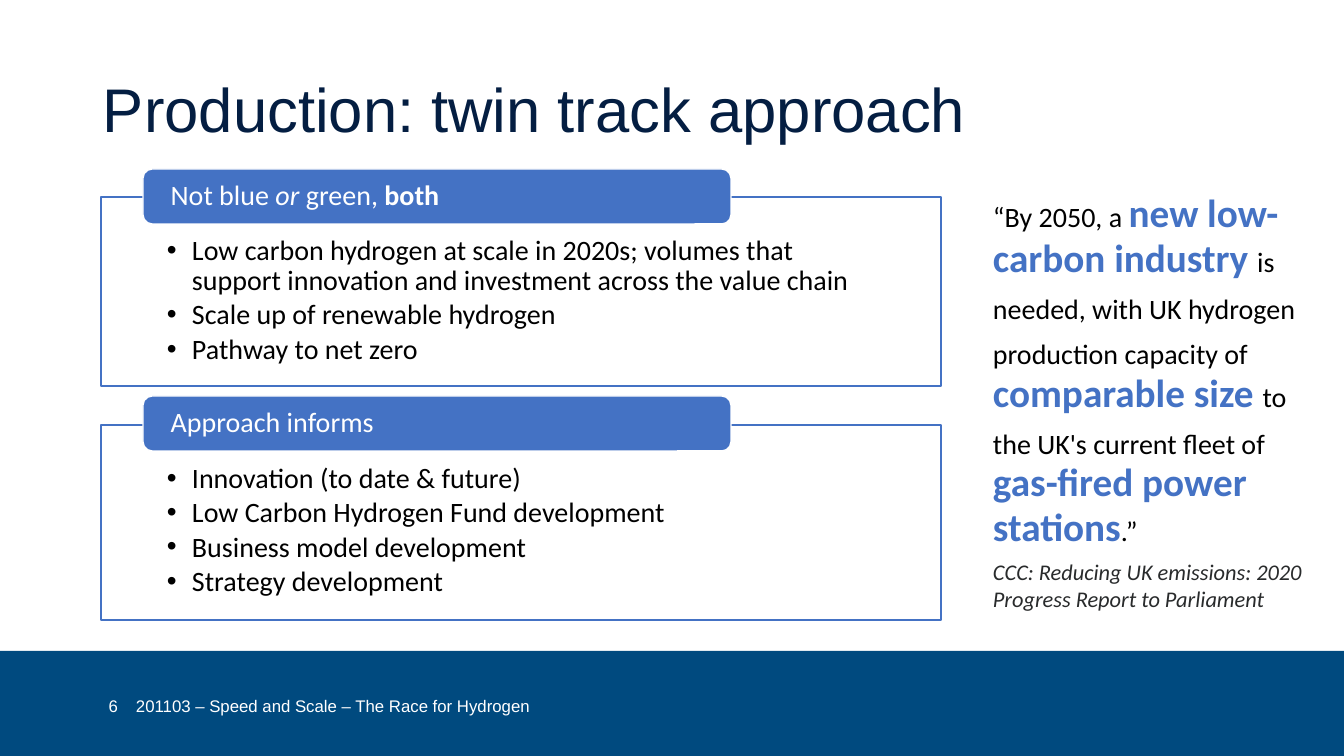
from dataclasses import dataclass

from lxml import etree
from pptx import Presentation
from pptx.dml.color import RGBColor
from pptx.enum.shapes import MSO_SHAPE
from pptx.enum.text import MSO_ANCHOR, PP_ALIGN
from pptx.oxml.ns import qn
from pptx.util import Emu, Pt

RECT, ROUNDED = MSO_SHAPE.RECTANGLE, MSO_SHAPE.ROUNDED_RECTANGLE
TOP, MIDDLE = MSO_ANCHOR.TOP, MSO_ANCHOR.MIDDLE
LEFT, RIGHT = PP_ALIGN.LEFT, PP_ALIGN.RIGHT
EMU_PER_PX = 914400 / 100.8


@dataclass(frozen=True)
class Theme:
    white: str = "FFFFFF"
    black: str = "000000"
    navy: str = "041E42"
    band: str = "004A7F"
    accent: str = "4472C4"
    source: str = "292B2C"
    heading_font: str = "Arial"
    body_font: str = "Calibri"
    title_size: int = 44
    strong_size: int = 28
    body_size: int = 20
    source_size: int = 16
    footer_size: int = 12


THEME = Theme()

TRACKS = [
    ((101, 197, 840, 189), 28,
     [("Not blue ", {}), ("or", {"italic": True}), (" green, ", {}), ("both", {"bold": True})],
     ["Low carbon hydrogen at scale in 2020s; volumes that support innovation and "
      "investment across the value chain",
      "Scale up of renewable hydrogen",
      "Pathway to net zero"]),
    ((101, 425, 840, 195), 29,
     [("Approach informs", {})],
     ["Innovation (to date & future)",
      "Low Carbon Hydrogen Fund development",
      "Business model development",
      "Strategy development"]),
]

# Each part of the quote is (text, emphasised).
QUOTE = [
    ("“By 2050, a ", False),
    ("new low-carbon industry ", True),
    ("is needed, with UK hydrogen production capacity of ", False),
    ("comparable size ", True),
    ("to the UK's current fleet of ", False),
    ("gas-fired power stations", True),
    (".”", False),
]
QUOTE_SOURCE = "CCC: Reducing UK emissions: 2020 Progress Report to Parliament"


def px(n):
    return Emu(round(n * EMU_PER_PX))


def set_frame(s, anchor, insets=(10, 5, 10, 5)):
    tf = s.text_frame
    tf.word_wrap = True
    tf.vertical_anchor = anchor
    tf.margin_left, tf.margin_top, tf.margin_right, tf.margin_bottom = map(px, insets)
    return tf


def add_text_box(slide, box, anchor):
    return set_frame(slide.shapes.add_textbox(*map(px, box)), anchor)


def add_panel(slide, kind, box, fill, line=None):
    s = slide.shapes.add_shape(kind, *map(px, box))
    s.shadow.inherit = False
    s.fill.solid()
    s.fill.fore_color.rgb = RGBColor.from_string(fill)
    if line:
        s.line.color.rgb = RGBColor.from_string(line)
        s.line.width = Pt(1)
    else:
        s.line.fill.background()
    return s


def add_run(p, text, size, color, font=THEME.body_font, bold=False, italic=False):
    r = p.add_run()
    r.text = text
    r.font.name = font
    r.font.size = Pt(size)
    r.font.color.rgb = RGBColor.from_string(color)
    r.font.bold = bold
    r.font.italic = italic


def add_bullet(p, indent):
    pPr = p._p.get_or_add_pPr()
    pPr.set("marL", str(px(indent)))
    pPr.set("indent", str(-px(indent)))
    etree.SubElement(pPr, qn("a:buFont")).set("typeface", THEME.heading_font)
    etree.SubElement(pPr, qn("a:buChar")).set("char", "•")


def add_title(slide, box, text):
    p = add_text_box(slide, box, MIDDLE).paragraphs[0]
    p.line_spacing = 0.9
    add_run(p, text, THEME.title_size, THEME.navy, THEME.heading_font)


def add_track(slide, box, tab_rise, heading, items):
    """Outlined bullet list with a heading tab that overlaps its top edge."""
    x, y, w, _ = box
    frame = add_panel(slide, RECT, box, THEME.white, THEME.accent)
    tf = set_frame(frame, TOP, (66, 39, 66, 16))
    for i, item in enumerate(items):
        p = tf.add_paragraph() if i else tf.paragraphs[0]
        add_bullet(p, 25)
        p.alignment = LEFT
        p.line_spacing = 0.9
        p.space_after = Pt(3)
        add_run(p, item, THEME.body_size, THEME.black)

    tab_box = (x + 42, y - tab_rise, w * 7 // 10, 55)
    tab = add_panel(slide, ROUNDED, tab_box, THEME.accent, THEME.white)
    p = set_frame(tab, MIDDLE, (25, 0, 25, 0)).paragraphs[0]
    p.alignment = LEFT
    p.line_spacing = 0.9
    for text, style in heading:
        add_run(p, text, THEME.body_size, THEME.white, **style)


def add_quote(slide, box):
    tf = add_text_box(slide, box, TOP)
    p = tf.paragraphs[0]
    p.line_spacing = Pt(32)
    for text, strong in QUOTE:
        size = THEME.strong_size if strong else THEME.body_size
        add_run(p, text, size, THEME.accent if strong else THEME.black, bold=strong)
    p = tf.add_paragraph()
    p.space_before = Pt(6)
    add_run(p, QUOTE_SOURCE, THEME.source_size, THEME.source, italic=True)


def add_footer(slide, box, number, text):
    x, y, _, _ = box
    add_panel(slide, RECT, box, THEME.band)
    for left, width, align, words in ((73, 55, RIGHT, number), (126, 454, LEFT, text)):
        p = add_text_box(slide, (x + left, y + 35, width, 40), MIDDLE).paragraphs[0]
        p.alignment = align
        add_run(p, words, THEME.footer_size, THEME.white, THEME.heading_font)


def main():
    prs = Presentation()
    prs.slide_width, prs.slide_height = px(1344), px(756)
    slide = prs.slides.add_slide(prs.slide_layouts[6])
    add_footer(slide, (0, 651, 1344, 105), "6",
               "201103 – Speed and Scale – The Race for Hydrogen")
    add_title(slide, (93, 40, 1159, 146), "Production: twin track approach")
    for track in TRACKS:
        add_track(slide, *track)
    add_quote(slide, (983, 186, 332, 434))
    prs.save("out.pptx")


if __name__ == "__main__":
    main()
